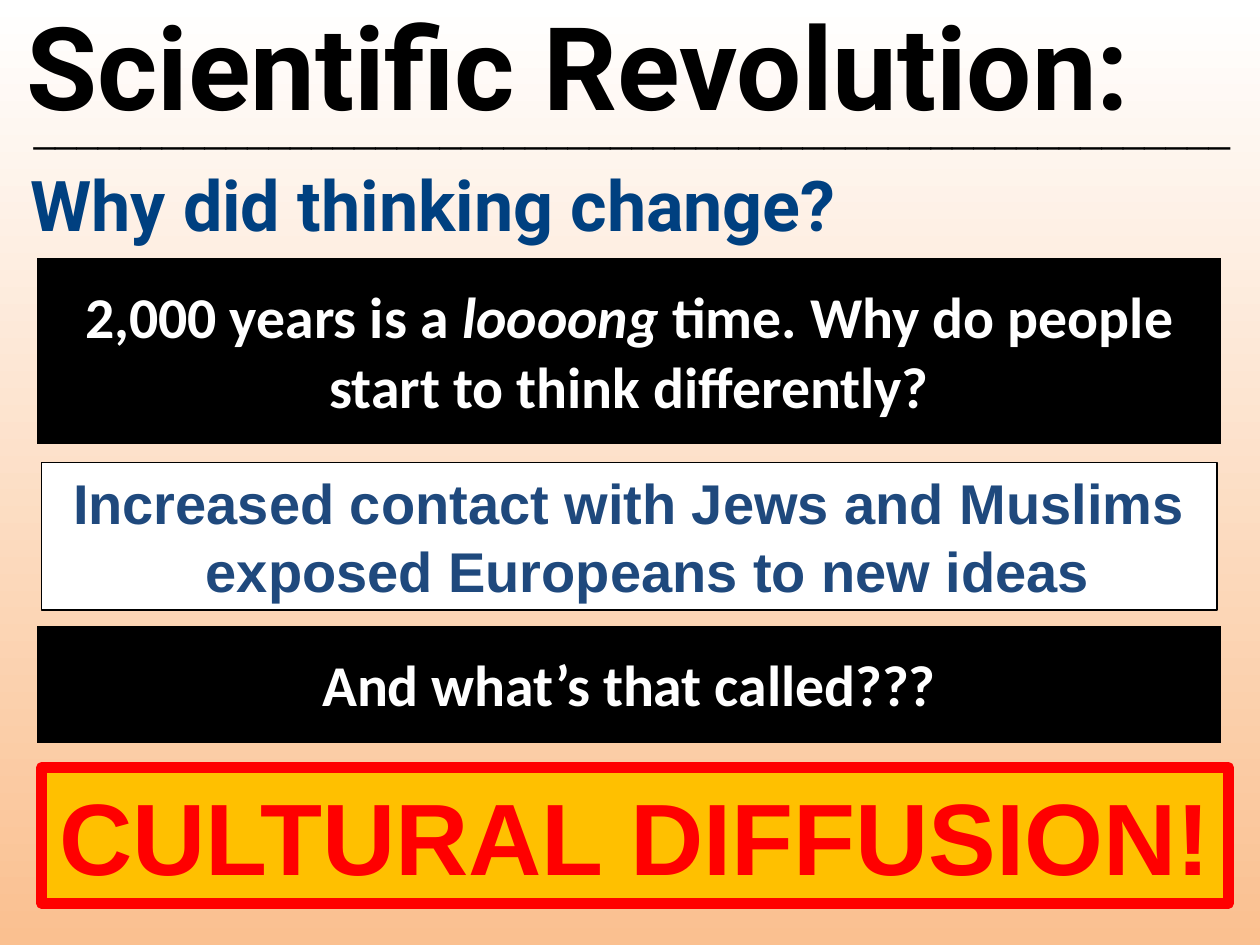
from lxml import etree
from pptx import Presentation
from pptx.dml.color import RGBColor
from pptx.enum.shapes import MSO_SHAPE
from pptx.enum.text import MSO_ANCHOR, PP_ALIGN
from pptx.oxml.ns import qn
from pptx.util import Inches, Pt

RECT = MSO_SHAPE.RECTANGLE
TOP, MIDDLE = MSO_ANCHOR.TOP, MSO_ANCHOR.MIDDLE
LEFT, CENTER = PP_ALIGN.LEFT, PP_ALIGN.CENTER
COLORS = {"black": "000000", "white": "FFFFFF", "peach": "FAC090", "blue": "004080",
          "navy": "1F497D", "gold": "FFC000", "red": "FF0000"}


def rgb(name):
    return RGBColor.from_string(COLORS[name])


def write(sp, runs, font, size, color, align, bold=True):
    """Fill a shape with one paragraph; every second run is italic."""
    p = sp.text_frame.paragraphs[0]
    p.alignment = align
    for i, text in enumerate(runs):
        r = p.add_run()
        r.text = text
        r.font.name, r.font.size = font, Pt(size)
        r.font.bold, r.font.italic = bold, i % 2 == 1
        r.font.color.rgb = rgb(color)


prs = Presentation()
prs.slide_width, prs.slide_height = Inches(10), Inches(7.5)
s = prs.slides.add_slide(prs.slide_layouts[5])

# Background: peach at the bottom fading to white at the top
bg = s.background.fill
bg.gradient()
bg.gradient_angle = 90
for stop, color, position in zip(bg.gradient_stops, ("peach", "white"), (0, 1)):
    stop.color.rgb = rgb(color)
    stop.position = position

# Title, rule and question
title = s.shapes.title
title.left, title.top = Inches(0.11), Inches(-0.09)
title.width, title.height = Inches(9.66), Inches(1.21)
rule = s.shapes.add_textbox(Inches(0.17), Inches(0.78), Inches(9.81), Inches(0.47))
question = s.shapes.add_textbox(Inches(0.14), Inches(1.23), Inches(7.18), Inches(0.77))
for sp in (title, rule, question):
    sp.text_frame.word_wrap = False
    sp.text_frame.vertical_anchor = TOP
write(title, ["Scientific Revolution:"], "Roboto", 66, "black", LEFT)
write(rule, ["_" * 56], "Arial", 22, "black", LEFT, bold=False)
write(question, ["Why did thinking change?"], "Roboto", 40, "blue", LEFT)

# Boxes: top, width, height, fill, line, line width, anchor, inset, runs, font, size, color
boxes = [
    (2.08, 9.33, 1.41, "black", "black", 5, TOP, 0.15,
     ["2,000 years is a ", "loooong", " time. Why do people start to think differently?"],
     "Calibri", 33, "white"),
    (3.67, 9.33, 1.17, "white", "black", 1, MIDDLE, 0.05,
     ["Increased contact with Jews and Muslims exposed Europeans to new ideas"],
     "Arial", 32, "navy"),
    (5, 9.33, 0.86, "black", "black", 5, TOP, 0.15,
     ["And what’s that called???"], "Calibri", 33, "white"),
    (6.09, 9.42, 1.08, "gold", "red", 6, TOP, 0.05,
     ["CULTURAL DIFFUSION!"], "Arial", 58, "red"),
]
for top, width, height, fill, line, weight, anchor, inset, runs, font, size, color in boxes:
    sp = s.shapes.add_shape(RECT, Inches(0.33), Inches(top), Inches(width), Inches(height))
    sp.shadow.inherit = False
    sp.fill.solid()
    sp.fill.fore_color.rgb = rgb(fill)
    sp.line.color.rgb = rgb(line)
    sp.line.width = Pt(weight)
    tf = sp.text_frame
    tf.word_wrap = True
    tf.vertical_anchor = anchor
    tf.margin_top = tf.margin_bottom = Inches(inset)
    write(sp, runs, font, size, color, CENTER)
    if fill == "black":  # square corners
        ln = sp.line.fill._xPr
        etree.SubElement(ln, qn("a:miter")).set("lim", "800000")
    if fill == "white":  # hanging indent
        pPr = tf.paragraphs[0]._p.get_or_add_pPr()
        pPr.set("marL", str(Inches(0.3)))
        pPr.set("indent", str(Inches(-0.3)))

prs.save("out.pptx")
